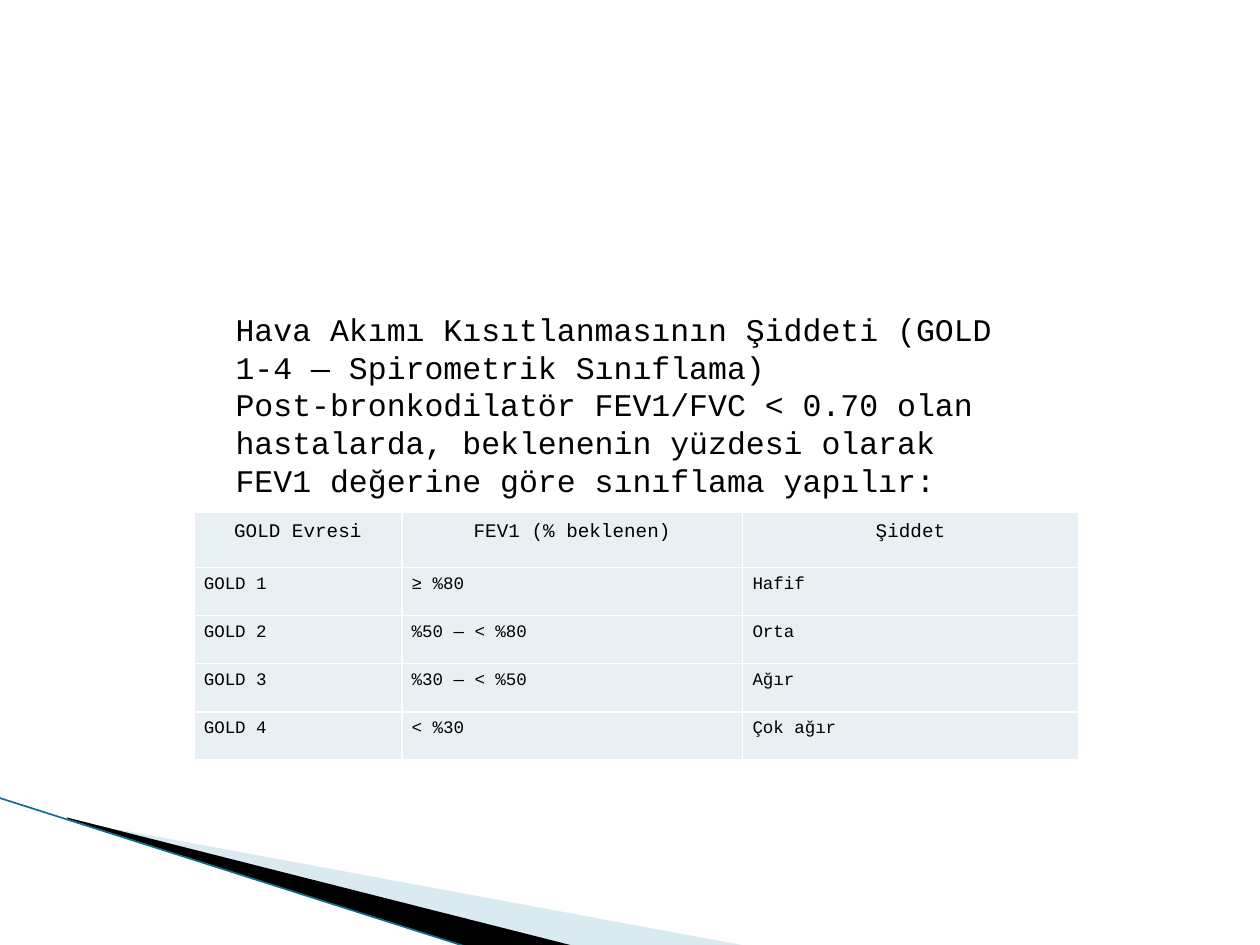
from lxml import etree
from pptx import Presentation
from pptx import util as u
from pptx.dml import color
from pptx.enum import shapes, text
from pptx.oxml import ns

FONT = "Courier New"
BLACK, WHITE, CELL_FILL, TEAL, PALE_BLUE = "000000", "FFFFFF", "E8F0F4", "0F6F87", "A0CBDC"

# Content
INTRO = [
    "Hava Akımı Kısıtlanmasının Şiddeti (GOLD 1-4 — Spirometrik Sınıflama)",
    "Post-bronkodilatör FEV1/FVC < 0.70 olan hastalarda, beklenenin yüzdesi olarak "
    "FEV1 değerine göre sınıflama yapılır:",
]
STAGES = [
    ("GOLD Evresi", "FEV1 (% beklenen)", "Şiddet"),
    ("GOLD 1", "≥ %80", "Hafif"),
    ("GOLD 2", "%50 — < %80", "Orta"),
    ("GOLD 3", "%30 — < %50", "Ağır"),
    ("GOLD 4", "< %30", "Çok ağır"),
]
COLUMN_WIDTHS = [4.19, 6.87, 6.77]
HEADER_HEIGHT, ROW_HEIGHT = 1.12, 0.97

# Corner wedges: points in cm, colour, opacity in percent
WEDGES = [
    ([(1.4, 16.54), (15.11, 19.08), (11.58, 19.08), (1.4, 16.51)], PALE_BLUE, 40),
    ([(1.35, 16.48), (11.61, 19.08), (9.45, 19.1), (1.37, 16.51)], BLACK, 100),
]


def rgb(value):
    return color.RGBColor.from_string(value)


def add_run(paragraph, words, size):
    run = paragraph.add_run()
    run.text = words
    run.font.name = FONT
    run.font.size = u.Pt(size)
    run.font.color.rgb = rgb(BLACK)


def add_wedge(slide, points, fill, opacity):
    builder = slide.shapes.build_freeform(*[u.Cm(v) for v in points[0]], scale=1.0)
    builder.add_line_segments([(u.Cm(x), u.Cm(y)) for x, y in points[1:]], close=True)
    shape = builder.convert_to_shape()
    shape.shadow.inherit = False
    shape.fill.solid()
    shape.fill.fore_color.rgb = rgb(fill)
    shape.line.fill.background()
    if opacity < 100:
        fill_color = shape.fill._xPr.find(".//" + ns.qn("a:srgbClr"))
        etree.SubElement(fill_color, ns.qn("a:alpha"), val=str(opacity * 1000))


def add_borders(cell, line_color, width):
    properties = cell._tc.get_or_add_tcPr()
    for side in ("a:lnL", "a:lnR", "a:lnT", "a:lnB"):
        line = etree.SubElement(properties, ns.qn(side), w=str(u.Pt(width)))
        fill = etree.SubElement(line, ns.qn("a:solidFill"))
        etree.SubElement(fill, ns.qn("a:srgbClr"), val=line_color)


def fill_cell(cell, words, is_header):
    add_borders(cell, WHITE, 1)
    cell.fill.solid()
    cell.fill.fore_color.rgb = rgb(CELL_FILL)
    cell.margin_left = cell.margin_right = u.Cm(0.2)
    cell.margin_top = cell.margin_bottom = u.Cm(0.18 if is_header else 0.15)
    paragraph = cell.text_frame.paragraphs[0]
    if is_header:
        paragraph.alignment = text.PP_ALIGN.CENTER
    else:
        paragraph.space_after = u.Pt(2)
    add_run(paragraph, words, 11 if is_header else 10)


def main():
    presentation = Presentation()
    presentation.slide_width, presentation.slide_height = u.Cm(25.4), u.Cm(19.05)
    slide = presentation.slides.add_slide(presentation.slide_layouts[6])

    # Corner decoration
    for points, fill, opacity in WEDGES:
        add_wedge(slide, points, fill, opacity)
    edge = slide.shapes.add_connector(
        shapes.MSO_CONNECTOR.STRAIGHT, u.Cm(-0.03), u.Cm(16.08), u.Cm(9.45), u.Cm(19.1))
    edge.line.color.rgb = rgb(TEAL)
    edge.line.width = u.Pt(0.95)
    etree.SubElement(edge._element.spPr, ns.qn("a:effectLst"))

    # Severity table
    heights = [HEADER_HEIGHT] + [ROW_HEIGHT] * (len(STAGES) - 1)
    table = slide.shapes.add_table(
        len(STAGES), len(COLUMN_WIDTHS), u.Cm(3.91), u.Cm(10.32),
        u.Cm(sum(COLUMN_WIDTHS)), u.Cm(sum(heights))).table
    for column, width in zip(table.columns, COLUMN_WIDTHS):
        column.width = u.Cm(width)
    for i, (height, stage) in enumerate(zip(heights, STAGES)):
        table.rows[i].height = u.Cm(height)
        for j, words in enumerate(stage):
            fill_cell(table.cell(i, j), words, i == 0)

    # Introduction
    frame = slide.shapes.add_textbox(u.Cm(4.5), u.Cm(6.12), u.Cm(15.95), u.Cm(4.11)).text_frame
    frame.word_wrap = True
    frame.auto_size = text.MSO_AUTO_SIZE.SHAPE_TO_FIT_TEXT
    for i, words in enumerate(INTRO):
        paragraph = frame.add_paragraph() if i else frame.paragraphs[0]
        add_run(paragraph, words, 18)

    presentation.save("out.pptx")


if __name__ == "__main__":
    main()
